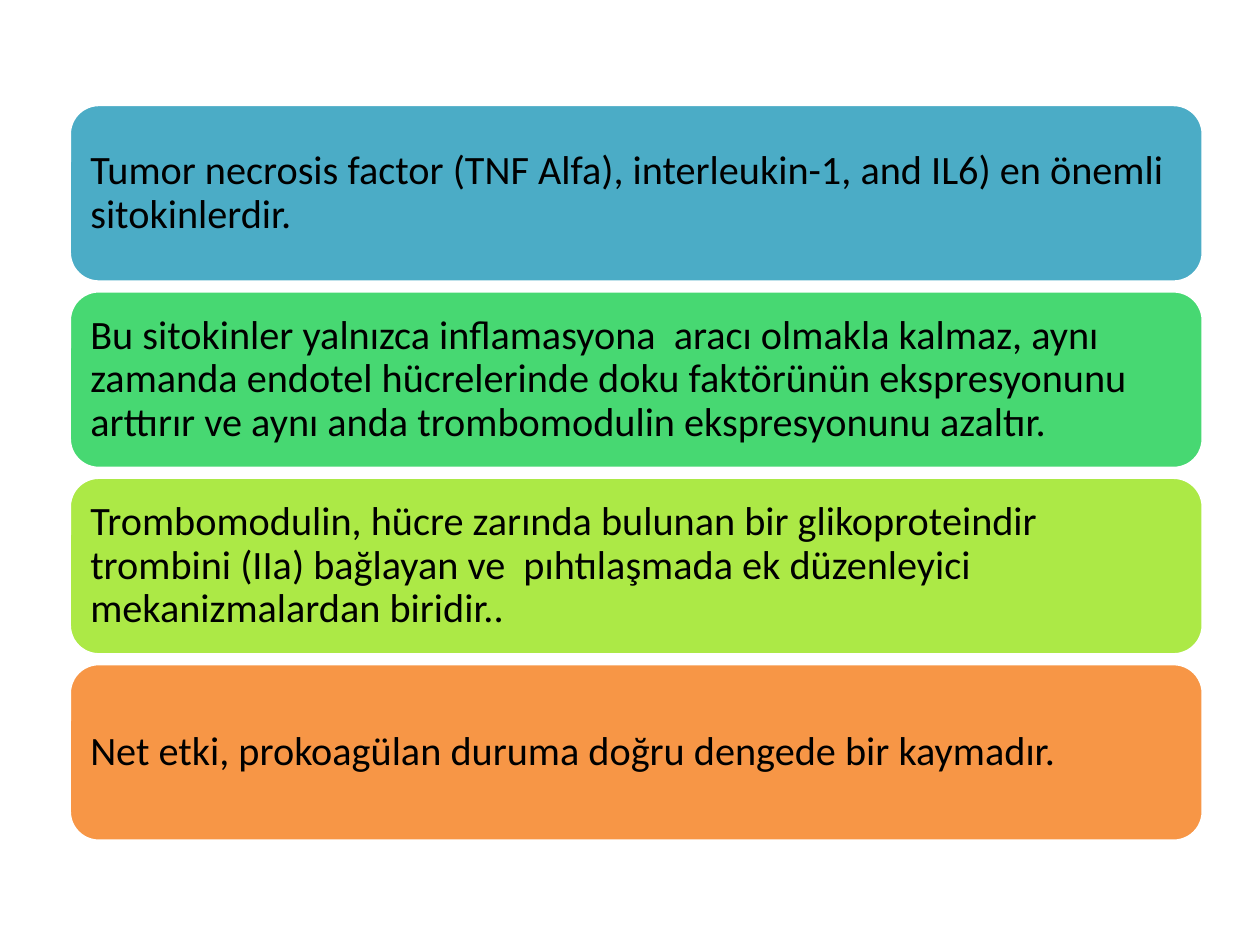
"""Build a slide of four stacked panels on cytokines and coagulation."""
import pptx
import pptx.dml.color
import pptx.enum.shapes
import pptx.enum.text
import pptx.util

Pt = pptx.util.Pt

PANELS = [
    ("Tumor necrosis factor (TNF Alfa), interleukin-1, and IL6) en önemli sitokinlerdir.", "blue"),
    ("Bu sitokinler yalnızca inflamasyona  aracı olmakla kalmaz, aynı zamanda endotel "
     "hücrelerinde doku faktörünün ekspresyonunu arttırır ve aynı anda trombomodulin "
     "ekspresyonunu azaltır.", "green"),
    ("Trombomodulin, hücre zarında bulunan bir glikoproteindir trombini (IIa) bağlayan ve  "
     "pıhtılaşmada ek düzenleyici mekanizmalardan biridir..", "lime"),
    ("Net etki, prokoagülan duruma doğru dengede bir kaymadır.", "orange"),
]

THEME = {
    "font": "Calibri", "size": 23, "text": "000000", "outline": "FFFFFF",
    "blue": "4BACC6", "green": "47D872", "lime": "ACE946", "orange": "F79646",
}

SLIDE_WIDTH, SLIDE_HEIGHT = 720, 540
LEFT, TOP, WIDTH, HEIGHT, GAP = 39.6, 59.7, 648, 101.5, 5
INSET = 7.2


def color(name):
    return pptx.dml.color.RGBColor.from_string(THEME[name])


def write_text(shape, text, *, size=THEME["size"], font=THEME["font"], text_color="text",
               line_spacing=0.9, space_after=8):
    frame = shape.text_frame
    frame.word_wrap = True
    frame.vertical_anchor = pptx.enum.text.MSO_ANCHOR.MIDDLE
    frame.margin_left = frame.margin_right = Pt(INSET)
    frame.margin_top = frame.margin_bottom = Pt(INSET)
    paragraph = frame.paragraphs[0]
    paragraph.alignment = pptx.enum.text.PP_ALIGN.LEFT
    paragraph.line_spacing = line_spacing
    paragraph.space_after = Pt(space_after)
    run = paragraph.add_run()
    run.text = text
    run.font.name = font
    run.font.size = Pt(size)
    run.font.color.rgb = color(text_color)


def add_panel(slide, top, fill):
    shape = slide.shapes.add_shape(
        pptx.enum.shapes.MSO_SHAPE.ROUNDED_RECTANGLE, Pt(LEFT), Pt(top), Pt(WIDTH), Pt(HEIGHT))
    shape.shadow.inherit = False
    shape.fill.solid()
    shape.fill.fore_color.rgb = color(fill)
    shape.line.color.rgb = color("outline")
    shape.line.width = Pt(2)
    return shape


def main():
    presentation = pptx.Presentation()
    presentation.slide_width = Pt(SLIDE_WIDTH)
    presentation.slide_height = Pt(SLIDE_HEIGHT)
    slide = presentation.slides.add_slide(presentation.slide_layouts[6])
    for index, (text, fill) in enumerate(PANELS):
        panel = add_panel(slide, TOP + index * (HEIGHT + GAP), fill)
        write_text(panel, text)
    presentation.save("out.pptx")


if __name__ == "__main__":
    main()
